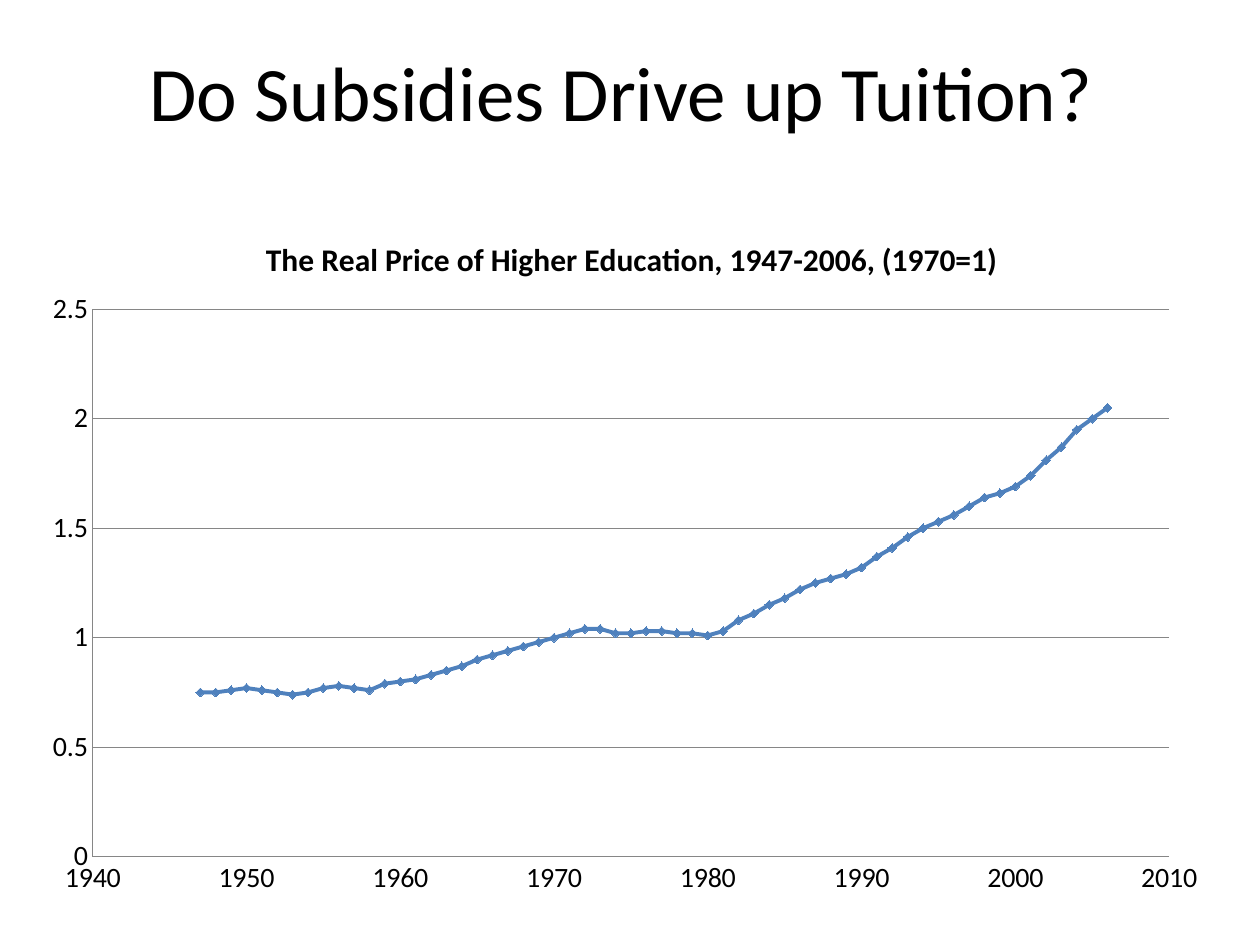
from lxml.etree import SubElement
from pptx import Presentation
from pptx.chart.data import XyChartData
from pptx.dml.color import RGBColor
from pptx.enum.chart import XL_CHART_TYPE, XL_MARKER_STYLE, XL_TICK_MARK
from pptx.enum.text import MSO_ANCHOR, PP_ALIGN
from pptx.oxml.ns import qn
from pptx.util import Pt

PX = 914400 / 126
BLACK = RGBColor(0x00, 0x00, 0x00)
GREY = RGBColor(0x86, 0x86, 0x86)
BLUE = RGBColor(0x4F, 0x81, 0xBD)
FONT = "Calibri"
FIRST_YEAR = 1947
PRICES = [
    0.75, 0.75, 0.76, 0.77, 0.76, 0.75, 0.74, 0.75, 0.77, 0.78,
    0.77, 0.76, 0.79, 0.8, 0.81, 0.83, 0.85, 0.87, 0.9, 0.92,
    0.94, 0.96, 0.98, 1, 1.02, 1.04, 1.04, 1.02, 1.02, 1.03,
    1.03, 1.02, 1.02, 1.01, 1.03, 1.08, 1.11, 1.15, 1.18, 1.22,
    1.25, 1.27, 1.29, 1.32, 1.37, 1.41, 1.46, 1.5, 1.53, 1.56,
    1.6, 1.64, 1.66, 1.69, 1.74, 1.81, 1.87, 1.95, 2, 2.05,
]


def px(length):
    return round(length * PX)


def set_layout(element, index, **settings):
    """Place a chart part by fractions of the chart area."""
    for layout in element.findall(qn("c:layout")):
        element.remove(layout)
    layout = SubElement(element, qn("c:layout"))
    element.insert(index, layout)
    manual = SubElement(layout, qn("c:manualLayout"))
    for name, value in settings.items():
        SubElement(manual, qn(f"c:{name}")).set("val", str(value))


presentation = Presentation()
presentation.slide_width = px(1260)
presentation.slide_height = px(945)
slide = presentation.slides.add_slide(presentation.slide_layouts[5])

# Slide title
title = slide.shapes.title
title.left, title.top, title.width, title.height = px(63), 0, px(1134), px(181)
title.text_frame.text = "Do Subsidies Drive up Tuition? "
title.text_frame.vertical_anchor = MSO_ANCHOR.MIDDLE
paragraph = title.text_frame.paragraphs[0]
paragraph.alignment = PP_ALIGN.CENTER
font = paragraph.runs[0].font
font.name, font.size = FONT, Pt(44)
font.color.rgb = BLACK

# Price chart
chart_data = XyChartData()
price_series = chart_data.add_series("Series 1")
for year, price in enumerate(PRICES, FIRST_YEAR):
    price_series.add_data_point(year, price)
chart = slide.shapes.add_chart(
    XL_CHART_TYPE.XY_SCATTER_LINES, px(33), px(204), px(1196), px(702), chart_data
).chart
chart.has_legend = False
chart.font.name, chart.font.size = FONT, Pt(10)
chart.font.color.rgb = BLACK

# Chart title
chart.has_title = True
chart_title = chart.chart_title
chart_title.text_frame.text = "The Real Price of Higher Education, 1947-2006, (1970=1)"
font = chart_title.text_frame.paragraphs[0].runs[0].font
font.name, font.size, font.bold = FONT, Pt(18), True
font.color.rgb = BLACK

# Axes
for axis, low, high, step in (
    (chart.category_axis, 1940, 2010, 10),
    (chart.value_axis, 0, 2.5, 0.5),
):
    axis.minimum_scale, axis.maximum_scale, axis.major_unit = low, high, step
    axis.major_tick_mark = axis.minor_tick_mark = XL_TICK_MARK.NONE
    axis.has_major_gridlines = axis is chart.value_axis
    axis.tick_labels.font.size = Pt(16)
    axis.tick_labels.number_format = "General"
    axis.tick_labels.number_format_is_linked = False
    axis.format.line.color.rgb = GREY
    axis.format.line.width = Pt(0.75)
chart.category_axis.has_major_gridlines = False
chart.value_axis.has_major_gridlines = True
gridline = chart.value_axis.major_gridlines.format.line
gridline.color.rgb, gridline.width = GREY, Pt(0.75)

# Price line and markers
chart.plots[0].vary_by_categories = False
series = chart.plots[0].series[0]
series.smooth = False
series.format.line.color.rgb = BLUE
series.format.line.width = Pt(2.25)
series.marker.style = XL_MARKER_STYLE.DIAMOND
series.marker.size = 5
series.marker.format.fill.solid()
series.marker.format.fill.fore_color.rgb = BLUE
series.marker.format.line.color.rgb = BLUE

# Positions inside the chart
chart_element = chart.element.find(qn("c:chart")) if hasattr(chart, "element") else chart._chartSpace.chart
set_layout(chart_element.find(qn("c:title")), 1, xMode="edge", yMode="edge", x=0.19, y=0.04)
set_layout(
    chart_element.find(qn("c:plotArea")), 0, layoutTarget="inner",
    xMode="edge", yMode="edge", x=0.05, y=0.15, w=0.9, h=0.78,
)

presentation.save("out.pptx")
